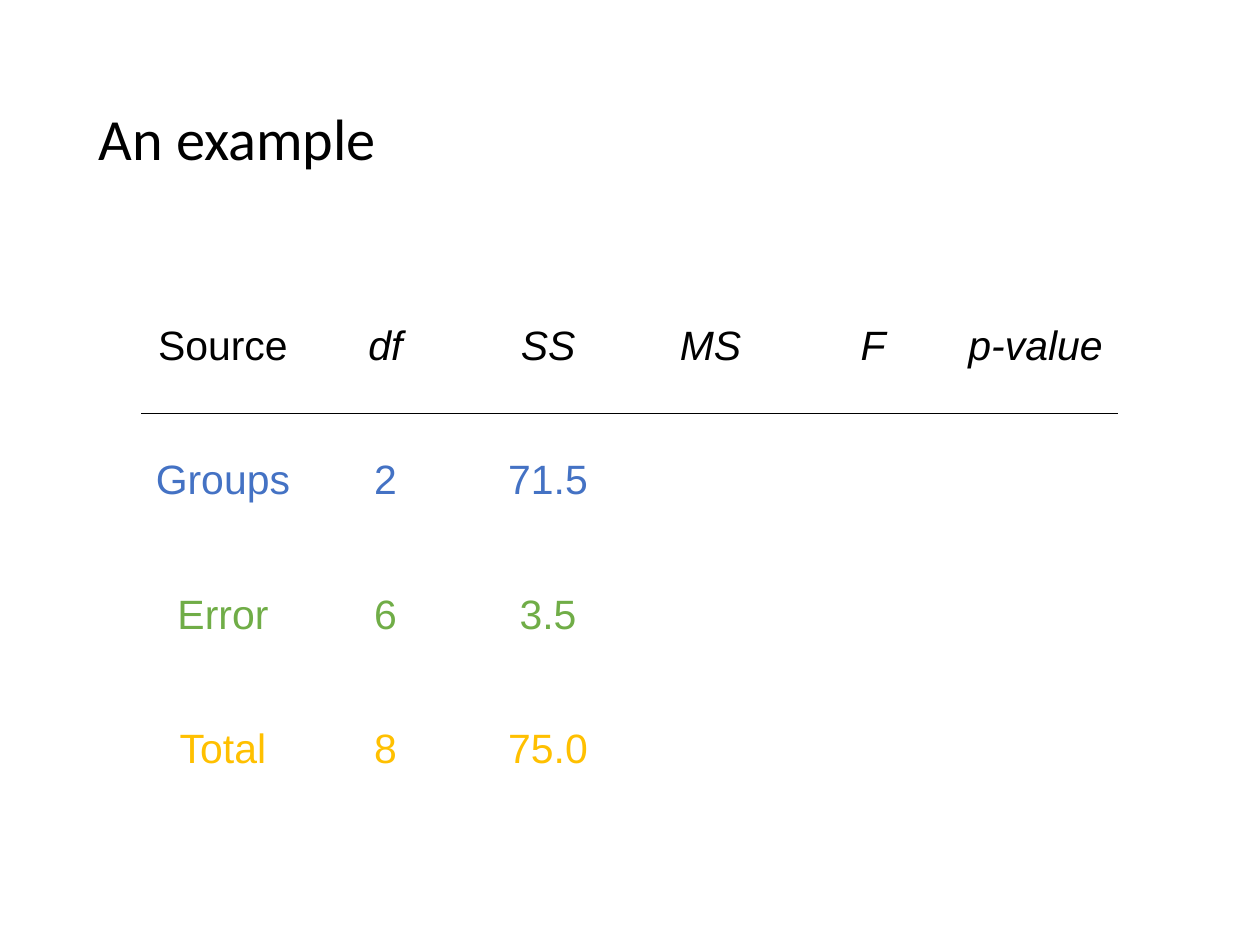
"""Build a slide with a partly filled ANOVA table."""
from lxml import etree
from pptx import Presentation
from pptx.dml.color import RGBColor
from pptx.enum.text import MSO_ANCHOR, PP_ALIGN
from pptx.oxml.ns import qn
from pptx.util import Inches, Pt

MIDDLE = MSO_ANCHOR.MIDDLE
CENTER = PP_ALIGN.CENTER
BLACK = RGBColor(0x00, 0x00, 0x00)
BLUE = RGBColor(0x44, 0x72, 0xC4)
GREEN = RGBColor(0x70, 0xAD, 0x47)
GOLD = RGBColor(0xFF, 0xC0, 0x00)

ANOVA_ROWS = [
    (BLACK, ["Source", "df", "SS", "MS", "F", "p-value"]),
    (BLUE, ["Groups", "2", "71.5", "", "", ""]),
    (GREEN, ["Error", "6", "3.5", "", "", ""]),
    (GOLD, ["Total", "8", "75.0", "", "", ""]),
]


def add_run(paragraph, text, font_name, size, color, italic=False):
    """Add one formatted run to a paragraph."""
    run = paragraph.add_run()
    run.text = text
    run.font.name = font_name
    run.font.size = Pt(size)
    run.font.color.rgb = color
    run.font.italic = italic


def add_title(slide, text):
    """Add the slide title."""
    title = slide.shapes.add_textbox(
        Inches(0.76), Inches(0.44), Inches(9.58), Inches(1.61))
    frame = title.text_frame
    frame.word_wrap = True
    frame.vertical_anchor = MIDDLE
    frame.margin_left = frame.margin_right = Inches(0.11)
    frame.margin_top = frame.margin_bottom = Inches(0.11)
    heading = frame.paragraphs[0]
    heading.line_spacing = 0.9
    add_run(heading, text, "Calibri", 37, BLACK)


def add_rule(cell, side):
    """Draw a black rule on one side of a cell, given as lnT or lnB."""
    rule = etree.Element(qn(f"a:{side}"), w=str(Pt(1)))
    fill = etree.SubElement(rule, qn("a:solidFill"))
    etree.SubElement(fill, qn("a:srgbClr"), val=str(BLACK))
    cell._tc.get_or_add_tcPr().insert(0, rule)


def add_anova_table(slide, rows):
    """Add the ANOVA table with a rule below its header."""
    table = slide.shapes.add_table(
        len(rows), len(rows[0][1]),
        Inches(1.25), Inches(2.46), Inches(8.6), Inches(4.74)).table
    table.first_row = False
    table.horz_banding = False
    for row_index, (color, values) in enumerate(rows):
        for column_index, value in enumerate(values):
            cell = table.cell(row_index, column_index)
            cell.fill.background()
            cell.vertical_anchor = MIDDLE
            cell.margin_left = cell.margin_right = Inches(0.05)
            if row_index < 2:
                add_rule(cell, "lnB" if row_index == 0 else "lnT")
            if value:
                entry = cell.text_frame.paragraphs[0]
                entry.alignment = CENTER
                is_symbol = row_index == 0 and column_index > 0
                add_run(entry, value, "Arial", 26, color, is_symbol)


def main():
    """Build and save the slide."""
    presentation = Presentation()
    presentation.slide_width = Inches(11.11)
    presentation.slide_height = Inches(8.33)
    slide = presentation.slides.add_slide(presentation.slide_layouts[6])
    add_title(slide, "An example")
    add_anova_table(slide, ANOVA_ROWS)
    presentation.save("out.pptx")


if __name__ == "__main__":
    main()
